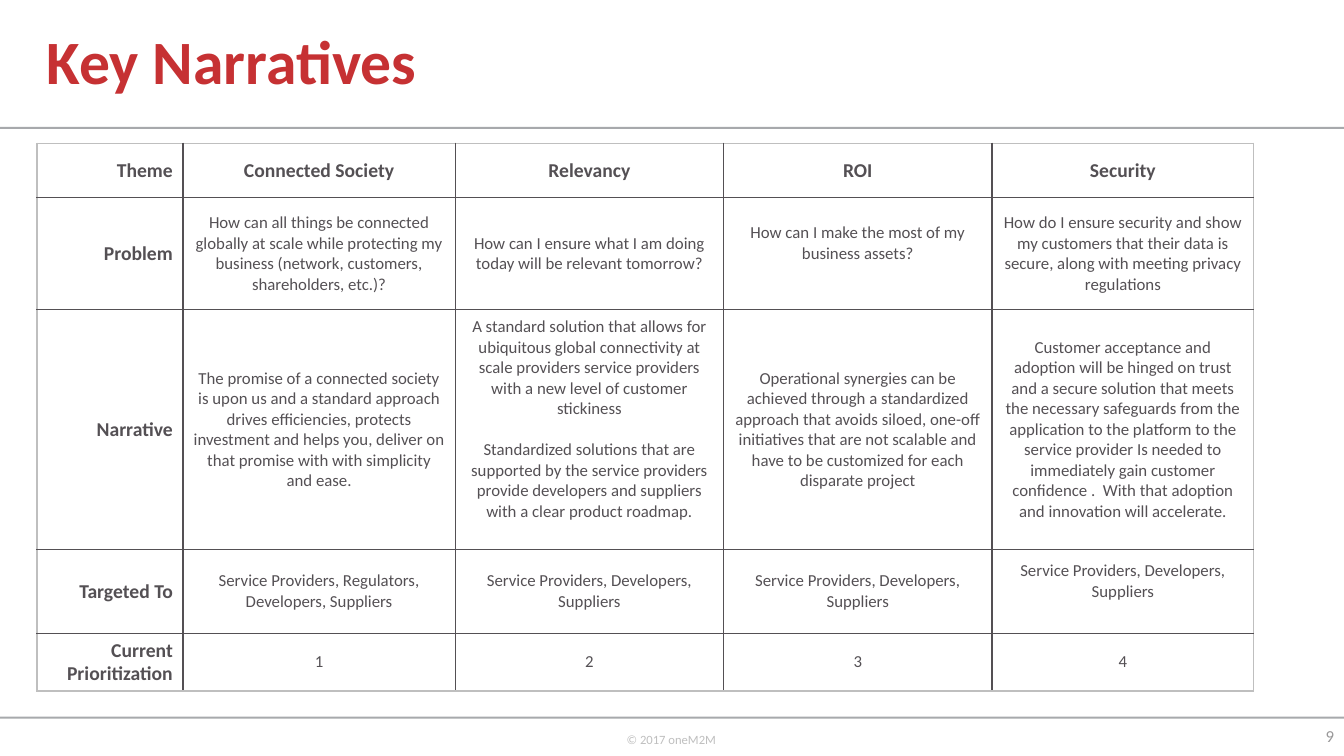
from lxml.etree import SubElement
from pptx import Presentation
from pptx.dml.color import RGBColor
from pptx.enum.shapes import MSO_SHAPE
from pptx.enum.text import MSO_ANCHOR, PP_ALIGN
from pptx.oxml.ns import qn
from pptx.util import Cm, Pt

COLORS = {
    "title": "C63133",
    "text": "545054",
    "rule": "A7A9AC",
    "frame": "BFBFBF",
    "number": "999899",
    "white": "FFFFFF",
}
FONT = "Calibri"
COL_WIDTHS = [3.68, 6.86, 6.76, 6.76, 6.6]
ROW_HEIGHTS = [1.37, 2.82, 6.05, 2.11, 1.45]
BLANK_LINE = 0.52
RAISED_CELLS = {(1, 3), (2, 2), (3, 4)}
DEVELOPERS = "Service Providers, Developers, Suppliers"
ROWS = [
    ["Theme", "Connected Society", "Relevancy", "ROI", "Security"],
    [
        "Problem",
        "How can all things be connected globally at scale while protecting my "
        "business (network, customers, shareholders, etc.)?",
        "How can I ensure what I am doing today will be relevant tomorrow?",
        "How can I make the most of my business assets?",
        "How do I ensure security and show my customers that their data is "
        "secure, along with meeting privacy regulations",
    ],
    [
        "Narrative",
        "The promise of a connected society is upon us and a standard approach "
        "drives efficiencies, protects investment and helps you, deliver on "
        "that promise with with simplicity and ease.",
        "A standard solution that allows for ubiquitous global connectivity at "
        "scale providers service providers with a new level of customer "
        "stickiness\n"
        "Standardized solutions that are supported by the service providers "
        "provide developers and suppliers with a clear product roadmap.",
        "Operational synergies can be achieved through a standardized approach "
        "that avoids siloed, one-off initiatives that are not scalable and "
        "have to be customized for each disparate project",
        "Customer acceptance and adoption will be hinged on trust and a secure "
        "solution that meets the necessary safeguards from the application to "
        "the platform to the service provider Is needed to immediately gain "
        "customer confidence .  With that adoption and innovation will "
        "accelerate.",
    ],
    [
        "Targeted To",
        "Service Providers, Regulators, Developers, Suppliers",
        DEVELOPERS,
        DEVELOPERS,
        DEVELOPERS,
    ],
    ["Current Prioritization", "1", "2", "3", "4"],
]


def rgb(name):
    return RGBColor.from_string(COLORS[name])


def format_text(tf, size, color, bold=False, align=PP_ALIGN.LEFT):
    for p in tf.paragraphs:
        p.alignment = align
        for r in p.runs:
            r.font.name = FONT
            r.font.size = Pt(size)
            r.font.bold = bold
            r.font.color.rgb = rgb(color)


def add_rule(s, top):
    sp = s.shapes.add_shape(MSO_SHAPE.RECTANGLE, 0, Cm(top), Cm(33.86), Cm(0.05))
    sp.shadow.inherit = False
    sp.fill.solid()
    sp.fill.fore_color.rgb = rgb("rule")
    sp.line.fill.background()


def add_text(s, text, left, top, width, height, size, color, bold=False,
             align=PP_ALIGN.LEFT, anchor=MSO_ANCHOR.MIDDLE, wrap=True):
    tf = s.shapes.add_textbox(Cm(left), Cm(top), Cm(width), Cm(height)).text_frame
    tf.word_wrap = wrap
    tf.vertical_anchor = anchor
    tf.text = text
    format_text(tf, size, color, bold, align)
    return tf


def set_borders(cell, row, col):
    outer = {
        "a:lnL": col == 0,
        "a:lnR": col == len(COL_WIDTHS) - 1,
        "a:lnT": row == 0,
        "a:lnB": row == len(ROW_HEIGHTS) - 1,
    }
    tcPr = cell._tc.get_or_add_tcPr()
    for tag, is_outer in outer.items():
        ln = SubElement(tcPr, qn(tag), w=str(Pt(1)))
        fill = SubElement(ln, qn("a:solidFill"))
        color = COLORS["frame" if is_outer else "text"]
        SubElement(fill, qn("a:srgbClr"), val=color)


def fill_cell(cell, row, col, text):
    cell.text = text
    cell.vertical_anchor = MSO_ANCHOR.MIDDLE
    heading = row == 0 or col == 0
    align = PP_ALIGN.RIGHT if col == 0 else PP_ALIGN.CENTER
    format_text(cell.text_frame, 14 if heading else 12, "text", heading, align)
    for p in cell.text_frame.paragraphs[1:]:
        p.space_before = Pt(14.65)
    if (row, col) in RAISED_CELLS:
        cell.margin_bottom = Cm(0.13 + BLANK_LINE)
    set_borders(cell, row, col)
    cell.fill.solid()
    cell.fill.fore_color.rgb = rgb("white")


def add_narratives_table(s):
    table = s.shapes.add_table(
        len(ROWS), len(COL_WIDTHS), Cm(0.93), Cm(3.61),
        Cm(sum(COL_WIDTHS)), Cm(sum(ROW_HEIGHTS)),
    ).table
    table.first_row = False
    table.horz_banding = False
    for column, width in zip(table.columns, COL_WIDTHS):
        column.width = Cm(width)
    for row, height in zip(table.rows, ROW_HEIGHTS):
        row.height = Cm(height)
    for i, texts in enumerate(ROWS):
        for j, text in enumerate(texts):
            fill_cell(table.cell(i, j), i, j, text)


def main():
    prs = Presentation()
    prs.slide_width, prs.slide_height = Cm(33.86), Cm(19.05)
    s = prs.slides.add_slide(prs.slide_layouts[6])
    for top in (3.2, 18.06):
        add_rule(s, top)
    add_text(s, "© 2017 oneM2M", 15.54, 18.31, 2.79, 1.02, 9, "frame",
             anchor=MSO_ANCHOR.TOP, wrap=False)
    title = add_text(s, "Key Narratives", 0.93, 0, 21.82, 3.25, 44, "title", bold=True)
    title.paragraphs[0].line_spacing = 0.9
    add_narratives_table(s)
    add_text(s, "9", 32.49, 18.03, 1.37, 1.02, 12, "number", align=PP_ALIGN.RIGHT)
    prs.save("out.pptx")


if __name__ == "__main__":
    main()
